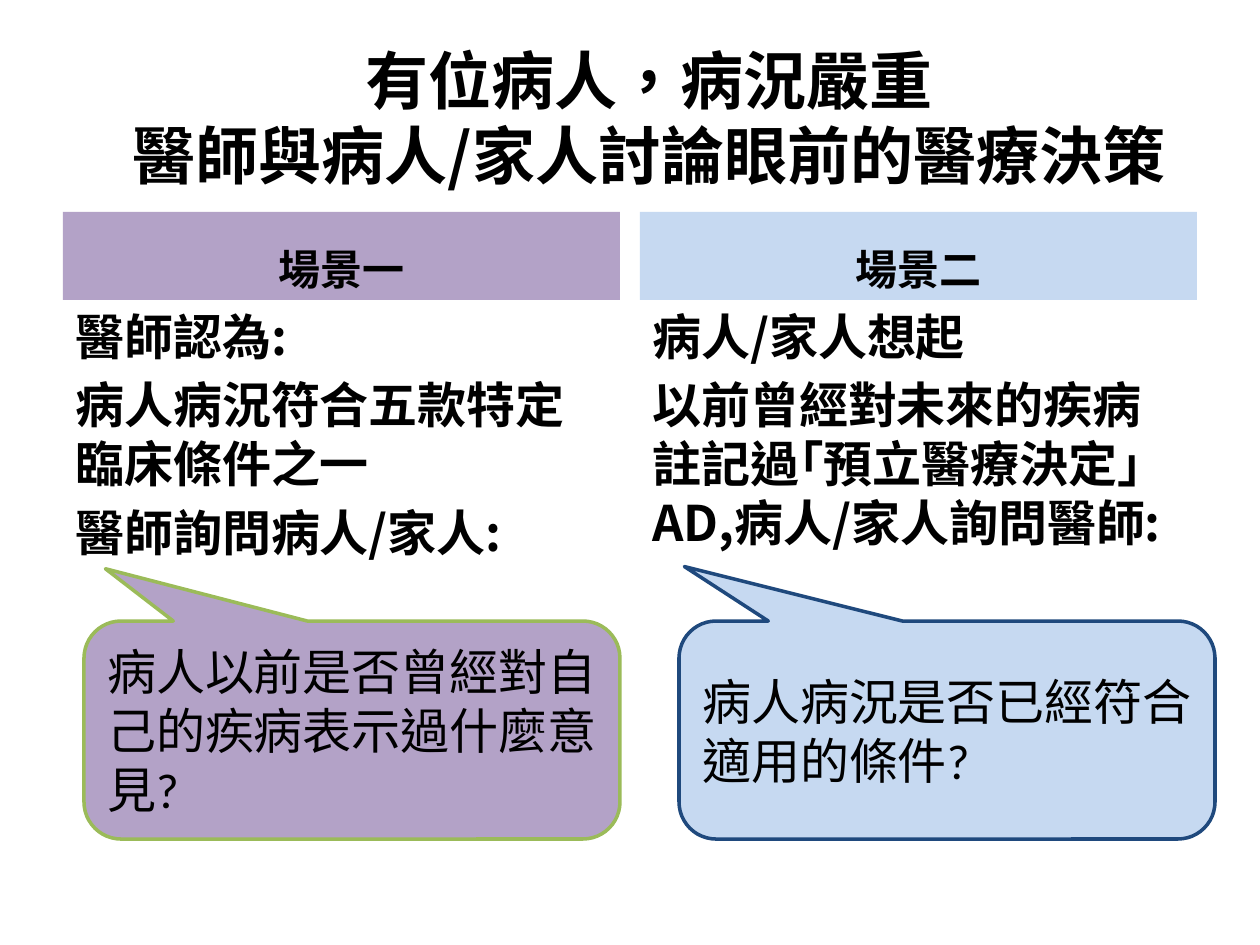
from lxml import etree
from pptx import Presentation
from pptx import util as u
from pptx.dml.color import RGBColor
from pptx.enum import shapes, text
from pptx.oxml.ns import qn

PX = u.Inches(1) / 126
COLORS = {"ink": "000000", "purple": "B3A2C7", "blue": "C6D9F1",
          "green": "9BBB59", "navy": "1F497D"}
CJK = "Noto Sans CJK SC"
SCENES = [
    {"left": 63, "heading": "場景一", "fill": "purple", "line": "green",
     "body": ["醫師認為:", "病人病況符合五款特定臨床條件之一", "醫師詢問病人/家人:"],
     "question": "病人以前是否曾經對自己的疾病表示過什麼意見?",
     "indent": 21, "tip": (-0.46, -0.74)},
    {"left": 640, "heading": "場景二", "fill": "blue", "line": "navy",
     "body": ["病人/家人想起", "以前曾經對未來的疾病註記過｢預立醫療決定」AD,病人/家人詢問醫師:"],
     "question": "病人病況是否已經符合適用的條件?",
     "indent": 39, "tip": (-0.49, -0.75)},
]


def px(n):
    return u.Emu(round(n * PX))


def rgb(name):
    return RGBColor.from_string(COLORS[name])


def write(sp, lines, size, anchor, align, bold=True, font=CJK, before=0):
    tf = sp.text_frame
    frame = {"word_wrap": True, "auto_size": text.MSO_AUTO_SIZE.NONE,
             "vertical_anchor": anchor}
    for name, value in frame.items():
        setattr(tf, name, value)
    tf.text = "\n".join(lines)
    for p in tf.paragraphs:
        p.alignment = align
        p.space_before = u.Pt(before)
        for r in p.runs:
            for name, value in {"size": u.Pt(size), "bold": bold, "name": font}.items():
                setattr(r.font, name, value)
            r.font.color.rgb = rgb("ink")
            rPr = r._r.get_or_add_rPr()
            rPr.set("lang", "zh-TW")
            etree.SubElement(rPr, qn("a:ea")).set("typeface", CJK)


def add_box(s, kind, box, fill, line=None):
    sp = s.shapes.add_shape(kind, *map(px, box))
    sp.shadow.inherit = False
    sp.fill.solid()
    sp.fill.fore_color.rgb = rgb(fill)
    if line:
        sp.line.color.rgb = rgb(line)
        sp.line.width = u.Pt(2)
    else:
        sp.line.fill.background()
    return sp


def add_title(s, box, lines):
    sp = s.shapes.title
    for name, value in zip(("left", "top", "width", "height"), box):
        setattr(sp, name, px(value))
    write(sp, ["\v".join(lines)], 36, text.MSO_ANCHOR.MIDDLE, text.PP_ALIGN.CENTER)


def add_scene(s, box, scene):
    x, y, w, h = box
    head = 88
    sp = add_box(s, shapes.MSO_SHAPE.RECTANGLE, (x, y, w, head), scene["fill"])
    write(sp, [scene["heading"]], 24, text.MSO_ANCHOR.BOTTOM,
          text.PP_ALIGN.CENTER, before=4.8)

    sp = s.shapes.add_textbox(*map(px, (x, y + head, w, h - head)))
    write(sp, scene["body"], 28, text.MSO_ANCHOR.TOP, text.PP_ALIGN.LEFT, before=5.6)

    sp = add_box(s, shapes.MSO_SHAPE.ROUNDED_RECTANGULAR_CALLOUT,
                 (x + scene["indent"], y + 409, w - 21, 218),
                 scene["fill"], scene["line"])
    for i, value in enumerate((*scene["tip"], 0.17)):
        sp.adjustments[i] = value
    write(sp, [scene["question"]], 28, text.MSO_ANCHOR.MIDDLE,
          text.PP_ALIGN.LEFT, bold=False, font="Calibri")


def main():
    prs = Presentation()
    prs.slide_width, prs.slide_height = px(1260), px(945)
    s = prs.slides.add_slide(prs.slide_layouts[5])
    add_title(s, (63, 38, 1172, 158),
              ["有位病人，病況嚴重", "醫師與病人/家人討論眼前的醫療決策"])
    for scene in SCENES:
        add_scene(s, (scene["left"], 212, 557, 632), scene)
    prs.save("out.pptx")


if __name__ == "__main__":
    main()
